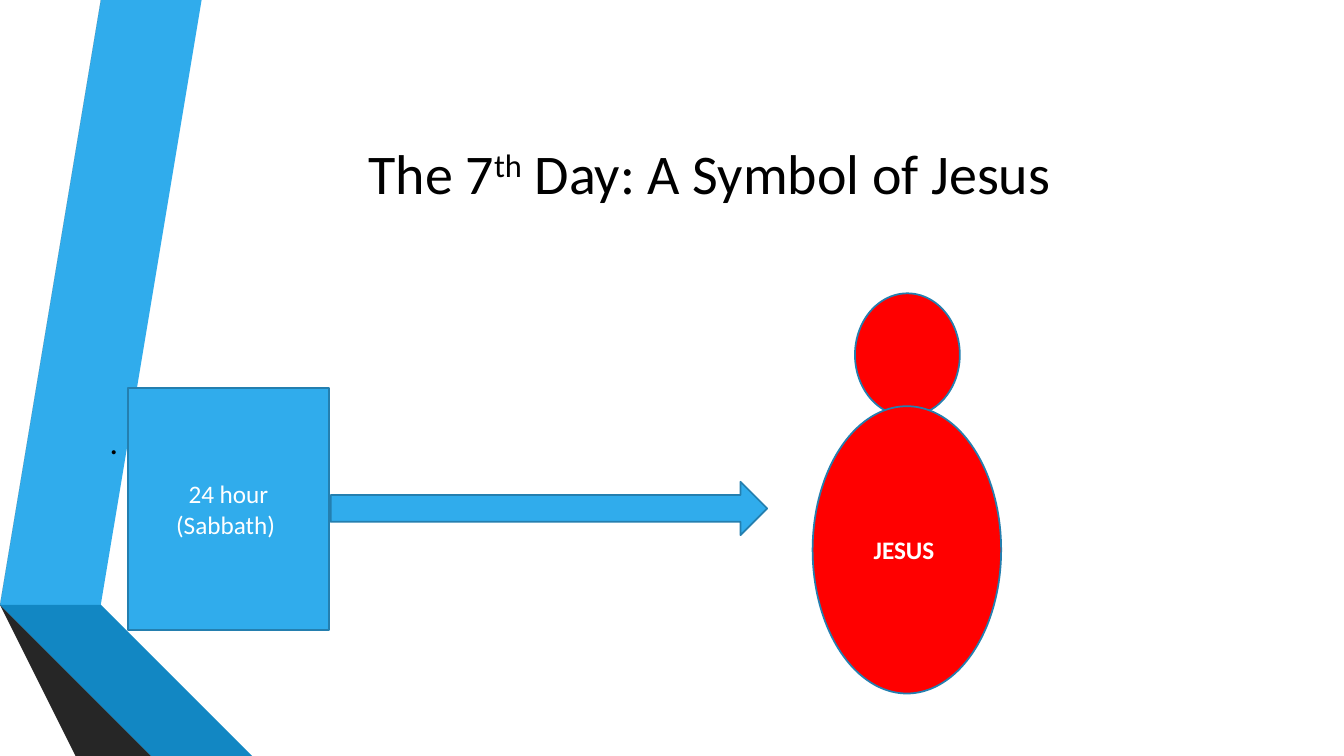
from pptx import Presentation
from pptx.dml.color import RGBColor
from pptx.enum.shapes import MSO_SHAPE
from pptx.enum.text import MSO_ANCHOR, PP_ALIGN
from pptx.util import Inches, Pt

RECTANGLE, ARROW, ELLIPSE = MSO_SHAPE.RECTANGLE, MSO_SHAPE.RIGHT_ARROW, MSO_SHAPE.OVAL
MIDDLE = MSO_ANCHOR.MIDDLE
LEFT, CENTER = PP_ALIGN.LEFT, PP_ALIGN.CENTER

BLACK = RGBColor(0x00, 0x00, 0x00)
WHITE = RGBColor(0xFF, 0xFF, 0xFF)
RED = RGBColor(0xFF, 0x00, 0x00)
BLUE = RGBColor(0x30, 0xAC, 0xEC)
OUTLINE_BLUE = RGBColor(0x24, 0x7F, 0xAF)
DEEP_BLUE = RGBColor(0x12, 0x87, 0xC3)
SHADE_BLUE = RGBColor(0x0C, 0x5A, 0x82)
GRAY = RGBColor(0x59, 0x59, 0x59)
DARK_GRAY = RGBColor(0x40, 0x40, 0x40)
SHADE_GRAY = RGBColor(0x26, 0x26, 0x26)

TITLE_FORMAT = {"size": Pt(40), "name": "Calibri"}
BODY_FORMAT = {"size": Pt(24), "name": "Calibri"}
LABEL_FORMAT = {"size": Pt(18), "name": "Calibri"}

RIBBONS = [
    (BLUE, [(0.5, 5.78), (0.77, 5.83), (1.73, 0), (1.45, 0)]),
    (GRAY, [(1.39, 0), (1.11, 0), (0.16, 5.73), (0.44, 5.77)]),
    (SHADE_GRAY, [(0.16, 5.73), (1.45, 7.5), (1.51, 7.5)]),
    (SHADE_BLUE, [(0.5, 5.79), (2.08, 7.5), (2.14, 7.5)]),
    (DEEP_BLUE, [(0.5, 5.78), (2.14, 7.5), (2.83, 7.5), (0.77, 5.83)]),
    (DARK_GRAY, [(2.02, 7.5), (0.48, 5.83), (0.44, 5.77), (0.16, 5.73), (1.51, 7.5)]),
]


def add_ribbon(page, color, points):
    builder = page.shapes.build_freeform(*points[0], scale=Inches(1))
    builder.add_line_segments(points[1:], close=True)
    ribbon = builder.convert_to_shape()
    ribbon.shadow.inherit = False
    ribbon.fill.solid()
    ribbon.fill.fore_color.rgb = color
    ribbon.line.fill.background()


def add_span(para, text, color, font_format):
    span = para.add_run()
    span.text = text
    span.font.color.rgb = color
    for name, value in font_format.items():
        setattr(span.font, name, value)
    return span


def prepare_text(box, alignment):
    """Set wrapping and alignment, and return the first paragraph."""
    box.text_frame.word_wrap = True
    box.text_frame.vertical_anchor = MIDDLE
    para = box.text_frame.paragraphs[0]
    para.alignment = alignment
    return para


def add_figure(page, kind, place, color):
    figure = page.shapes.add_shape(kind, *map(Inches, place))
    figure.shadow.inherit = False
    figure.fill.solid()
    figure.fill.fore_color.rgb = color
    figure.line.color.rgb = OUTLINE_BLUE
    figure.line.width = Pt(1.25)
    return figure


def add_label(figure, text, bold=False):
    para = prepare_text(figure, CENTER)
    add_span(para, text, WHITE, {**LABEL_FORMAT, "bold": bold})


def fill_title(page):
    title = page.shapes.title
    title.left, title.top = Inches(1.62), Inches(0.75)
    title.width, title.height = Inches(10.96), Inches(1.92)
    para = prepare_text(title, CENTER)
    add_span(para, "The 7", BLACK, TITLE_FORMAT)
    ordinal = add_span(para, "th", BLACK, TITLE_FORMAT)
    ordinal._r.get_or_add_rPr().set("baseline", "30000")
    add_span(para, " Day: A Symbol of Jesus ", BLACK, TITLE_FORMAT)


def add_body(page):
    box = page.shapes.add_textbox(Inches(0.99), Inches(2.67), Inches(10.96), Inches(3.42))
    para = prepare_text(box, LEFT)
    para.space_after = Pt(6)
    add_span(para, ".", BLACK, BODY_FORMAT)


def main():
    deck = Presentation()
    deck.slide_width, deck.slide_height = Inches(13.33), Inches(7.5)
    page = deck.slides.add_slide(deck.slide_layouts[5])
    for color, points in RIBBONS:
        add_ribbon(page, color, points)
    fill_title(page)
    add_body(page)

    sabbath = add_figure(page, RECTANGLE, (1.27, 3.85, 1.99, 2.4), BLUE)
    add_label(sabbath, "24 hour (Sabbath) ")
    add_figure(page, ARROW, (3.28, 4.78, 4.33, 0.53), BLUE)
    add_figure(page, ELLIPSE, (8.48, 2.91, 1.04, 1.22), RED)
    torso = add_figure(page, ELLIPSE, (8.06, 4.03, 1.87, 2.85), RED)
    add_label(torso, "JESUS ", bold=True)
    deck.save("out.pptx")


if __name__ == "__main__":
    main()
